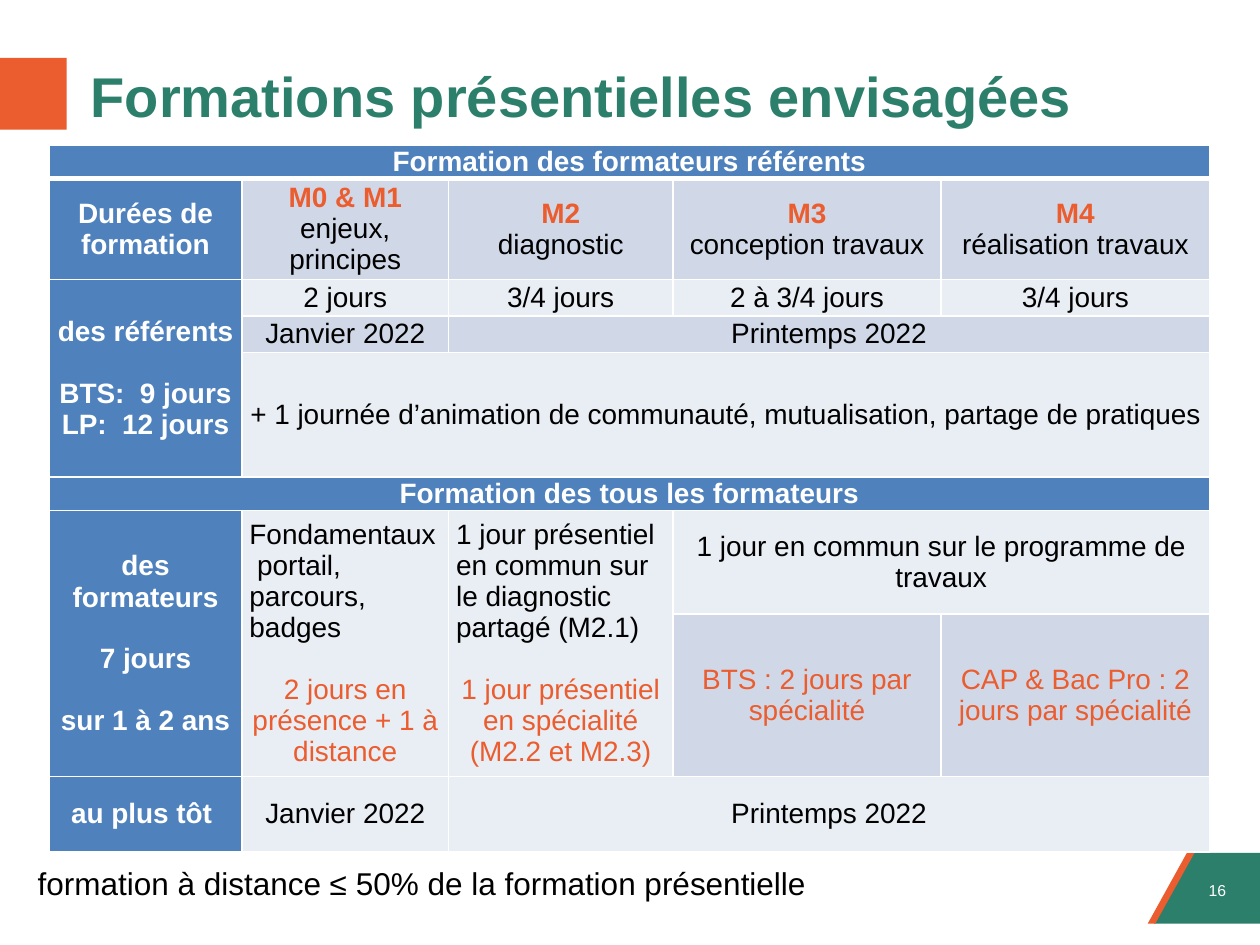
"""Build the slide presenting the planned classroom training sessions."""
from lxml import etree
from pptx import Presentation
from pptx.dml.color import RGBColor
from pptx.enum.shapes import MSO_SHAPE
from pptx.enum.text import MSO_ANCHOR, PP_ALIGN
from pptx.oxml.ns import qn
from pptx.util import Inches, Pt

RECTANGLE = MSO_SHAPE.RECTANGLE
LEFT, CENTER, RIGHT = PP_ALIGN.LEFT, PP_ALIGN.CENTER, PP_ALIGN.RIGHT
MIDDLE, BOTTOM = MSO_ANCHOR.MIDDLE, MSO_ANCHOR.BOTTOM
FONT = "Arial"
COLORS = {
    "green": "2C7F6B", "orange": "EB5C2E", "white": "FFFFFF", "black": "000000",
    "blue": "4F81BD", "band": "D0D8E8", "pale": "E9EDF4",
}
HEAD, BODY, ACCENT = ("white", True), ("black", False), ("orange", False)
MODULE = ("orange", True)
LINE_GAP = 17.5


def style_font(font, size, color, bold=False):
    font.name, font.size, font.bold = FONT, Pt(size), bold
    font.color.rgb = RGBColor.from_string(COLORS[color])


def paint(shape, color):
    shape.shadow.inherit = False
    shape.fill.solid()
    shape.fill.fore_color.rgb = RGBColor.from_string(COLORS[color])
    shape.line.fill.background()


prs = Presentation()
prs.slide_width, prs.slide_height = Inches(10), Inches(7.5)
slide = prs.slides.add_slide(prs.slide_layouts[5])

corner_parts = [
    ("green", [(9.16, 7.33), (9.47, 6.77), (10, 6.77), (10, 7.33)]),
    ("orange", [(9.11, 7.33), (9.42, 6.77), (9.48, 6.77), (9.17, 7.33)]),
]
for color, points in corner_parts:
    outline = [(Inches(x), Inches(y)) for x, y in points]
    builder = slide.shapes.build_freeform(*outline[0])
    builder.add_line_segments(outline[1:], close=True)
    paint(builder.convert_to_shape(), color)

title_marker = slide.shapes.add_shape(RECTANGLE, 0, Inches(0.46), Inches(0.53), Inches(0.57))
paint(title_marker, "orange")

title = slide.shapes.title
title.left, title.top, title.width, title.height = map(Inches, (0.62, 0.43, 8.75, 0.64))
title.text_frame.text = "Formations présentielles envisagées"
title.text_frame.vertical_anchor = BOTTOM
title.text_frame.paragraphs[0].alignment = LEFT
style_font(title.text_frame.paragraphs[0].font, 32, "green", True)

captions = [
    ("16", (9.48, 6.94, 0.35, 0.25), 9, "white", RIGHT),
    ("formation à distance ≤ 50% de la formation présentielle",
     (0.2, 6.81, 8.17, 0.4), 18, "black", LEFT),
]
for text, box, size, color, alignment in captions:
    caption = slide.shapes.add_textbox(*map(Inches, box)).text_frame
    caption.word_wrap = True
    caption.text = text
    caption.paragraphs[0].alignment = alignment
    style_font(caption.paragraphs[0].font, size, color)

column_widths = [1.53, 1.64, 1.78, 2.13, 2.13]
row_heights = [0.26, 0.78, 0.29, 0.29, 0.99, 0.26, 0.82, 1.14, 0.6]
table = slide.shapes.add_table(
    len(row_heights), len(column_widths), Inches(0.39), Inches(1.15),
    Inches(sum(column_widths)), Inches(sum(row_heights))).table
table.first_row = table.horz_banding = False
for column, width in zip(table.columns, column_widths):
    column.width = Inches(width)
for row, height in zip(table.rows, row_heights):
    row.height = Inches(height)

cells = [
    (0, 0, 1, 5, "blue", [("Formation des formateurs référents", HEAD, CENTER, 0)]),
    (1, 0, 1, 1, "blue", [("Durées de formation", HEAD, CENTER, 0)]),
    (2, 0, 3, 1, "blue", [("des référents", HEAD, CENTER, 0),
                          ("BTS:  9 jours", HEAD, CENTER, LINE_GAP),
                          ("LP:  12 jours", HEAD, CENTER, 0)]),
    (3, 1, 1, 1, "band", [("Janvier 2022", BODY, CENTER, 0)]),
    (3, 2, 1, 3, "band", [("Printemps 2022", BODY, CENTER, 0)]),
    (4, 1, 1, 4, "pale", [("+ 1 journée d’animation de communauté, mutualisation, "
                           "partage de pratiques", BODY, CENTER, 0)]),
    (5, 0, 1, 5, "blue", [("Formation des tous les formateurs", HEAD, CENTER, 0)]),
    (6, 0, 2, 1, "blue", [("des formateurs", HEAD, CENTER, 0),
                          ("7 jours", HEAD, CENTER, LINE_GAP),
                          ("sur 1 à 2 ans", HEAD, CENTER, LINE_GAP)]),
    (6, 1, 2, 1, "pale", [("Fondamentaux  portail, parcours, badges", BODY, LEFT, 0),
                          ("2 jours en présence + 1 à distance", ACCENT, CENTER, LINE_GAP)]),
    (6, 2, 2, 1, "pale", [("1 jour présentiel en commun sur le diagnostic partagé (M2.1)",
                           BODY, LEFT, 0),
                          ("1 jour présentiel en spécialité (M2.2 et M2.3)",
                           ACCENT, CENTER, LINE_GAP)]),
    (6, 3, 1, 2, "pale", [("1 jour en commun sur le programme de travaux", BODY, CENTER, 0)]),
    (7, 3, 1, 1, "band", [("BTS : 2 jours par spécialité", ACCENT, CENTER, 0)]),
    (7, 4, 1, 1, "band", [("CAP & Bac Pro : 2 jours par spécialité", ACCENT, CENTER, 0)]),
    (8, 0, 1, 1, "blue", [("au plus tôt ", HEAD, CENTER, 0)]),
    (8, 1, 1, 1, "pale", [("Janvier 2022", BODY, CENTER, 0)]),
    (8, 2, 1, 3, "pale", [("Printemps 2022", BODY, CENTER, 0)]),
]
modules = [
    ("M0 & M1", "enjeux, principes", "2 jours"),
    ("M2", "diagnostic", "3/4 jours"),
    ("M3", "conception travaux", "2 à 3/4 jours"),
    ("M4", "réalisation travaux", "3/4 jours"),
]
for col, (module, topic, duration) in enumerate(modules, 1):
    cells.append((1, col, 1, 1, "band", [(module, MODULE, CENTER, 0)]))
    cells.append((2, col, 1, 1, "pale", [(duration, BODY, CENTER, 0)]))

for row, col, row_span, col_span, fill, paragraphs in cells:
    cell = table.cell(row, col)
    if row_span * col_span > 1:
        cell.merge(table.cell(row + row_span - 1, col + col_span - 1))
    cell.fill.solid()
    cell.fill.fore_color.rgb = RGBColor.from_string(COLORS[fill])
    cell.vertical_anchor = MIDDLE
    cell.margin_left = cell.margin_right = Inches(0.06)
    cell.margin_top = cell.margin_bottom = 0
    cell.text = "\n".join(text for text, *_ in paragraphs)
    for paragraph, (_, style, alignment, gap) in zip(cell.text_frame.paragraphs, paragraphs):
        paragraph.alignment = alignment
        if gap:
            paragraph.space_before = Pt(gap)
        style_font(paragraph.font, 16, *style)

for col, (_, topic, _) in enumerate(modules, 1):
    paragraph = table.cell(1, col).text_frame.paragraphs[0]
    paragraph.add_line_break()
    topic_run = paragraph.add_run()
    topic_run.text = topic
    style_font(topic_run.font, 16, *BODY)

for row in range(len(row_heights)):
    for col in range(len(column_widths)):
        properties = table.cell(row, col)._tc.get_or_add_tcPr()
        for position, side in enumerate("LRTB"):
            thick = (row, side) in [(0, "B"), (1, "T")]
            border = etree.Element(qn(f"a:ln{side}"), w=str(Pt(3 if thick else 1)))
            border_fill = etree.SubElement(border, qn("a:solidFill"))
            etree.SubElement(border_fill, qn("a:srgbClr"), val=COLORS["white"])
            properties.insert(position, border)

prs.save("out.pptx")
